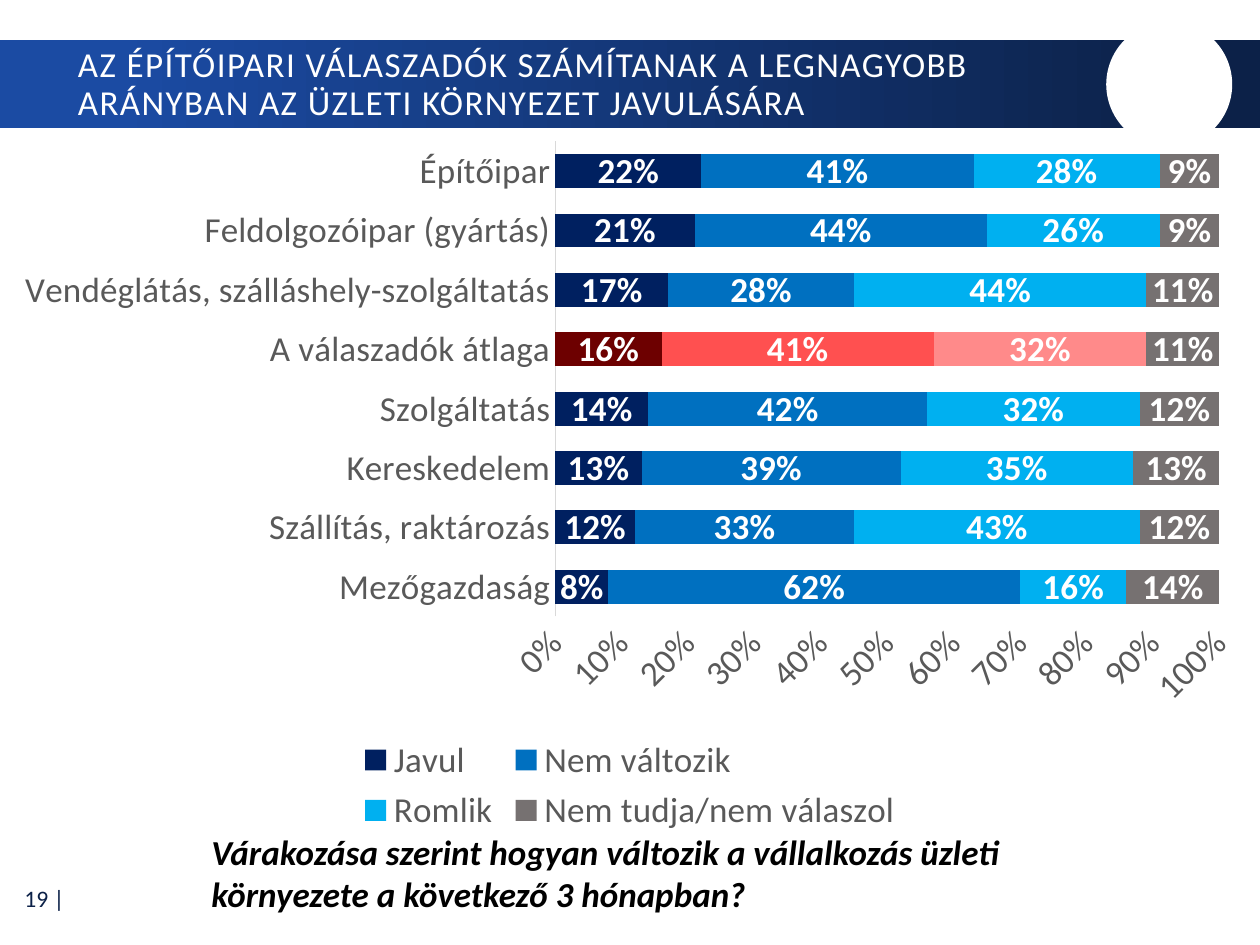
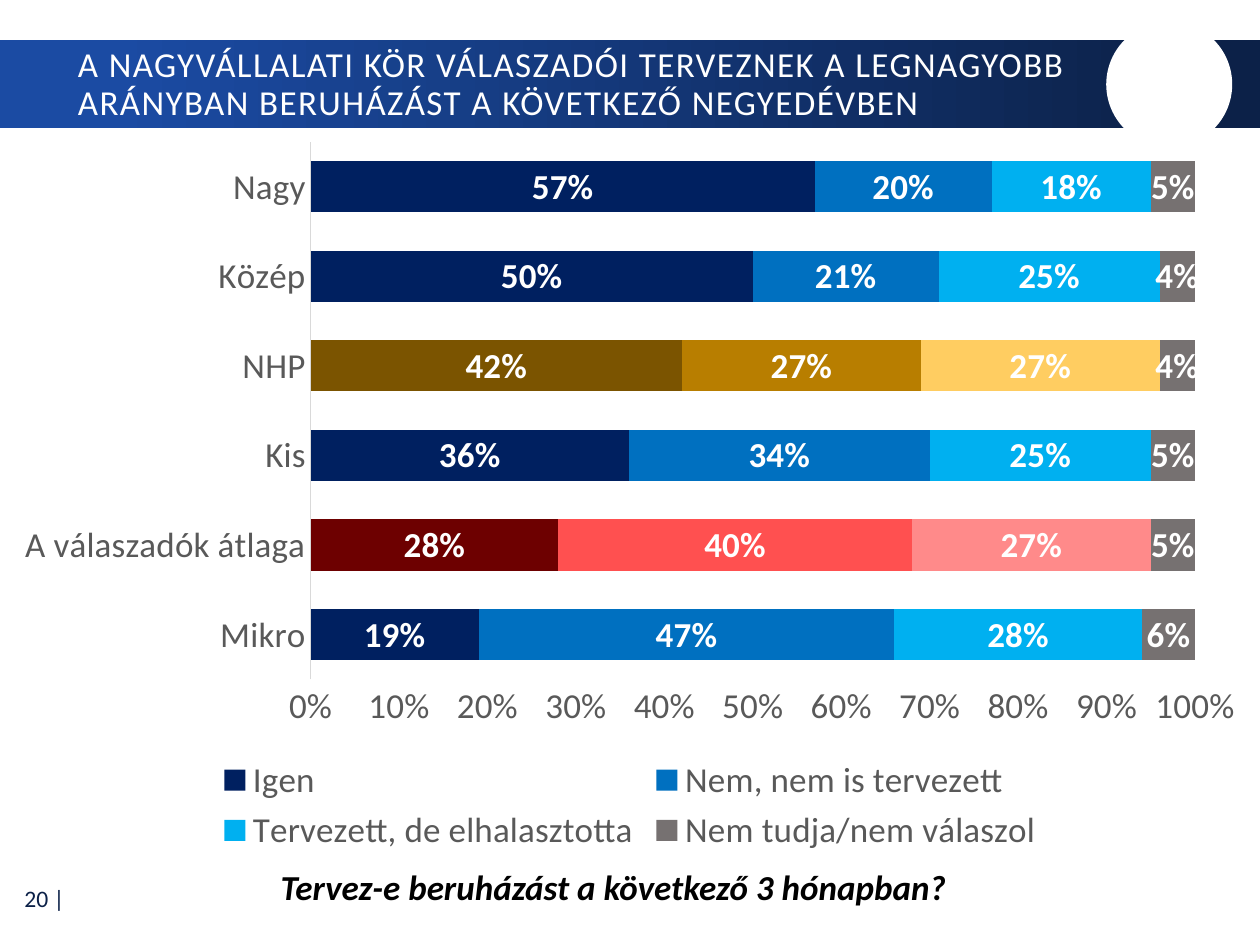
from dataclasses import dataclass

from pptx import Presentation
from pptx.chart.data import CategoryChartData
from pptx.dml.color import RGBColor
from pptx.enum import chart as ch, shapes, text
from pptx.util import Inches, Pt

FONT = "Calibri"
WHITE = RGBColor(0xFF, 0xFF, 0xFF)
BLACK = RGBColor(0x00, 0x00, 0x00)
BAND_BLUE = RGBColor(0x1B, 0x4B, 0xA3)
BAND_NAVY = RGBColor(0x0C, 0x21, 0x48)
AXIS_TEXT = RGBColor(0x59, 0x59, 0x59)
AXIS_LINE = RGBColor(0xD9, 0xD9, 0xD9)

# Colours run from the first answer to the last
ANSWERS = (RGBColor(0x00, 0x20, 0x60), RGBColor(0x00, 0x70, 0xC0),
           RGBColor(0x00, 0xB0, 0xF0), RGBColor(0x76, 0x71, 0x71))
AVERAGE = (RGBColor(0x6D, 0x00, 0x00), RGBColor(0xFF, 0x50, 0x50),
           RGBColor(0xFF, 0x8A, 0x8A))
LOAN = (RGBColor(0x7B, 0x54, 0x00), RGBColor(0xB8, 0x7E, 0x00),
        RGBColor(0xFF, 0xCD, 0x61))
HIGHLIGHTS = {"A válaszadók átlaga": AVERAGE, "NHP": LOAN}


@dataclass
class Box:
    left: float
    top: float
    width: float
    height: float

    def emu(self) -> tuple:
        return tuple(Inches(v) for v in (self.left, self.top, self.width, self.height))


@dataclass
class Survey:
    page: int
    title: str
    question: str
    question_box: Box
    chart_box: Box
    chart_type: ch.XL_CHART_TYPE
    axis_max: float | None
    answers: tuple
    rows: dict  # percentages per respondent group, bottom bar first


SURVEYS = [
    Survey(
        19,
        "AZ ÉPÍTŐIPARI VÁLASZADÓK SZÁMÍTANAK A LEGNAGYOBB ARÁNYBAN "
        "AZ ÜZLETI KÖRNYEZET JAVULÁSÁRA",
        "Várakozása szerint hogyan változik a vállalkozás üzleti környezete "
        "a következő 3 hónapban?",
        Box(1.58, 6.54, 7.72, 0.77), Box(0, 1.01, 10, 5.65),
        ch.XL_CHART_TYPE.BAR_STACKED, 1,
        ("Javul", "Nem változik", "Romlik", "Nem tudja/nem válaszol"),
        {
            "Mezőgazdaság": (8, 62, 16, 14),
            "Szállítás, raktározás": (12, 33, 43, 12),
            "Kereskedelem": (13, 39, 35, 13),
            "Szolgáltatás": (14, 42, 32, 12),
            "A válaszadók átlaga": (16, 41, 32, 11),
            "Vendéglátás, szálláshely-szolgáltatás": (17, 28, 44, 11),
            "Feldolgozóipar (gyártás)": (21, 44, 26, 9),
            "Építőipar": (22, 41, 28, 9),
        },
    ),
    Survey(
        20,
        "A NAGYVÁLLALATI KÖR VÁLASZADÓI TERVEZNEK A LEGNAGYOBB ARÁNYBAN "
        "BERUHÁZÁST A KÖVETKEZŐ NEGYEDÉVBEN",
        "Tervez-e beruházást a következő 3 hónapban?",
        Box(2.13, 6.82, 5.74, 0.44), Box(0, 1.01, 10, 5.81),
        ch.XL_CHART_TYPE.BAR_STACKED_100, None,
        ("Igen", "Nem, nem is tervezett", "Tervezett, de elhalasztotta",
         "Nem tudja/nem válaszol"),
        {
            "Mikro": (19, 47, 28, 6),
            "A válaszadók átlaga": (28, 40, 27, 5),
            "Kis": (36, 34, 25, 5),
            "NHP": (42, 27, 27, 4),
            "Közép": (50, 21, 25, 4),
            "Nagy": (57, 20, 18, 5),
        },
    ),
]


def set_font(font, color: RGBColor, size: float = 20, bold: bool = False,
             italic: bool = False) -> None:
    font.name, font.size, font.bold, font.italic = FONT, Pt(size), bold, italic
    font.color.rgb = color


def add_text(s, box: Box, words: str, color: RGBColor, anchor=text.MSO_ANCHOR.MIDDLE,
             **style):
    tf = s.shapes.add_textbox(*box.emu()).text_frame
    tf.word_wrap = True
    tf.vertical_anchor = anchor
    p = tf.paragraphs[0]
    r = p.add_run()
    r.text = words
    set_font(r.font, color, **style)
    return p, r


def add_plain_shape(s, kind: shapes.MSO_SHAPE, box: Box):
    sp = s.shapes.add_shape(kind, *box.emu())
    sp.shadow.inherit = False
    sp.line.fill.background()
    return sp


def add_frame(s, survey: Survey) -> None:
    # Page number
    p, _ = add_text(s, Box(0.01, 6.94, 0.6, 0.37), f"{survey.page} |", BAND_NAVY, size=13.5)
    p.alignment = text.PP_ALIGN.RIGHT

    # Title band with its white disc
    band = add_plain_shape(s, shapes.MSO_SHAPE.RECTANGLE, Box(0, 0.32, 10, 0.7))
    band.fill.gradient()
    band.fill.gradient_angle = 0
    stops = ((0.09, BAND_BLUE), (0.95, BAND_NAVY))
    for stop, (position, color) in zip(band.fill.gradient_stops, stops):
        stop.position = position
        stop.color.rgb = color
    disc = add_plain_shape(s, shapes.MSO_SHAPE.OVAL, Box(8.78, 0.17, 1, 1))
    disc.fill.solid()
    disc.fill.fore_color.rgb = WHITE

    # Title
    p, r = add_text(s, Box(0.52, 0.34, 8.32, 0.67), survey.title, WHITE)
    p.line_spacing = 0.9
    r.font._element.set("spc", "80")


def add_survey_chart(s, survey: Survey) -> None:
    data = CategoryChartData(number_format="0%")
    data.categories = list(survey.rows)
    for name, values in zip(survey.answers, zip(*survey.rows.values())):
        data.add_series(name, [v / 100 for v in values])
    chart = s.shapes.add_chart(survey.chart_type, *survey.chart_box.emu(), data).chart
    chart.has_title = False
    set_font(chart.font, AXIS_TEXT)

    # Axes and legend
    for axis in (chart.category_axis, chart.value_axis):
        axis.has_major_gridlines = False
        axis.major_tick_mark = axis.minor_tick_mark = ch.XL_TICK_MARK.NONE
        set_font(axis.tick_labels.font, AXIS_TEXT)
    line = chart.category_axis.format.line
    line.color.rgb = AXIS_LINE
    line.width = Pt(0.75)
    values = chart.value_axis
    values.format.line.fill.background()
    values.tick_labels.number_format = "0%"
    values.tick_labels.number_format_is_linked = False
    if survey.axis_max is not None:
        values.maximum_scale = survey.axis_max
    chart.has_legend = True
    chart.legend.position = ch.XL_LEGEND_POSITION.BOTTOM
    chart.legend.include_in_layout = False
    set_font(chart.legend.font, AXIS_TEXT)

    # Bars and their labels
    plot = chart.plots[0]
    plot.gap_width, plot.overlap = 75, 100
    plot.vary_by_categories = False
    for k, (series, color) in enumerate(zip(plot.series, ANSWERS)):
        series.format.fill.solid()
        series.format.fill.fore_color.rgb = color
        for i, group in enumerate(survey.rows):
            shades = HIGHLIGHTS.get(group, ())
            if k < len(shades):
                fill = series.points[i].format.fill
                fill.solid()
                fill.fore_color.rgb = shades[k]
        labels = series.data_labels
        labels.show_value = True
        labels.number_format = "0%"
        labels.number_format_is_linked = False
        set_font(labels.font, WHITE, bold=True)


def main() -> None:
    prs = Presentation()
    prs.slide_width, prs.slide_height = Inches(10), Inches(7.5)
    for survey in SURVEYS:
        s = prs.slides.add_slide(prs.slide_layouts[6])
        add_frame(s, survey)
        add_survey_chart(s, survey)
        add_text(s, survey.question_box, survey.question, BLACK,
                 text.MSO_ANCHOR.TOP, bold=True, italic=True)
    prs.save("out.pptx")


if __name__ == "__main__":
    main()
